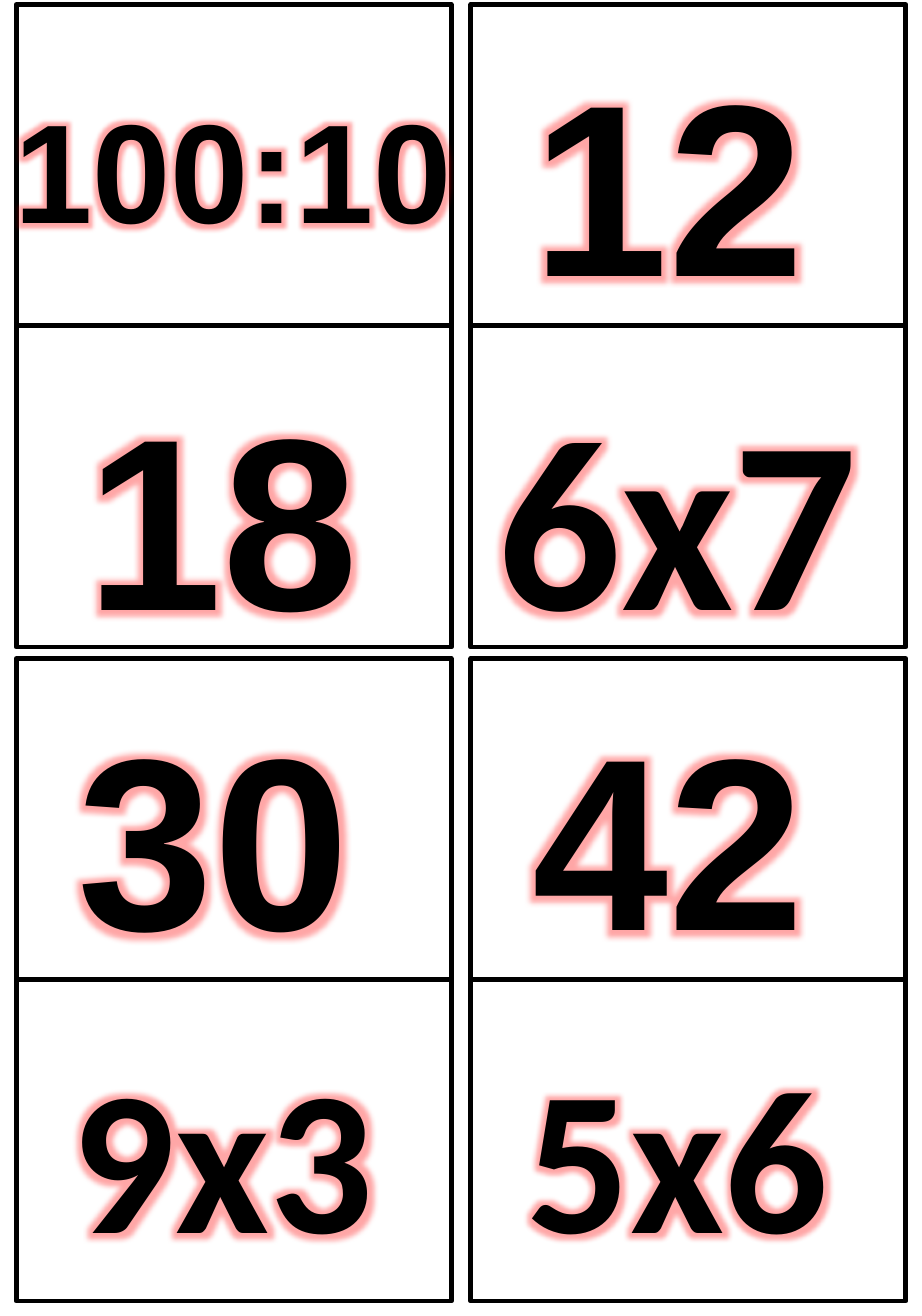
from lxml.etree import SubElement
from pptx import Presentation
from pptx.dml.color import RGBColor
from pptx.enum.shapes import MSO_CONNECTOR, MSO_SHAPE
from pptx.enum.text import MSO_AUTO_SIZE, PP_ALIGN
from pptx.oxml import parse_xml
from pptx.oxml.ns import nsdecls, qn
from pptx.util import Pt

PIXEL = 9144
BLACK = RGBColor(0x00, 0x00, 0x00)
WHITE = RGBColor(0xFF, 0xFF, 0xFF)
GLOW = RGBColor(0xFF, 0x00, 0x00)

CARD_WIDTH, CARD_HEIGHT = 378, 558
CARD_LEFT, CARD_TOP = 14, 4
COLUMN_STEP, ROW_STEP = 395, 568
TEXT_WIDTH = 427
TEXT_HEIGHTS = {153: 277, 128: 233, 88: 159}

CARDS = [
    [
        [("100:10", 88, -25, 62), ("18", 153, -34, 308)],
        [("12", 153, -42, 18), ("6x7", 153, -34, 308)],
    ],
    [
        [("30", 153, -42, 18), ("9x3", 128, -34, 316)],
        [("42", 153, -42, 18), ("5x6", 128, -34, 316)],
    ],
]


def px(*lengths):
    return [length * PIXEL for length in lengths]


def add_glow(run):
    properties = run.font._element
    effects = parse_xml(
        f'<a:effectLst {nsdecls("a")}><a:glow rad="{Pt(8)}"><a:srgbClr val="{GLOW}">'
        '<a:alpha val="35000"/></a:srgbClr></a:glow></a:effectLst>'
    )
    properties.find(qn("a:solidFill")).addnext(effects)


def add_text(slide, text, left, top, width, height, *, size, font="Calibri",
             complex_font="Arial", color=BLACK, bold=True):
    box = slide.shapes.add_textbox(*px(left, top, width, height))
    frame = box.text_frame
    frame.word_wrap = True
    frame.auto_size = MSO_AUTO_SIZE.SHAPE_TO_FIT_TEXT
    frame.margin_left, frame.margin_right = px(11, 11)
    frame.margin_top, frame.margin_bottom = px(6, 6)
    paragraph = frame.paragraphs[0]
    paragraph.alignment = PP_ALIGN.CENTER
    paragraph._p.get_or_add_pPr().set("rtl", "1")
    run = paragraph.add_run()
    run.text = text
    run.font.name = font
    run.font.size = Pt(size)
    run.font.bold = bold
    run.font.color.rgb = color
    add_glow(run)
    SubElement(run.font._element, qn("a:cs")).set("typeface", complex_font)


def add_card(slide, left, top, width, height, labels):
    card = slide.shapes.add_shape(MSO_SHAPE.RECTANGLE, *px(left, top, width, height))
    card.shadow.inherit = False
    card.fill.solid()
    card.fill.fore_color.rgb = WHITE
    middle = top + height // 2
    divider = slide.shapes.add_connector(
        MSO_CONNECTOR.STRAIGHT, *px(left, middle, left + width, middle)
    )
    divider.begin_connect(card, 1)
    divider.end_connect(card, 3)
    SubElement(divider._element.spPr, qn("a:effectLst"))
    for outline in (card.line, divider.line):
        outline.color.rgb = BLACK
        outline.width = Pt(3)
    for text, size, offset_x, offset_y in labels:
        add_text(slide, text, left + offset_x, top + offset_y,
                 TEXT_WIDTH, TEXT_HEIGHTS[size], size=size)


def main():
    presentation = Presentation()
    presentation.slide_width, presentation.slide_height = px(801, 1143)
    slide = presentation.slides.add_slide(presentation.slide_layouts[6])
    for row, cards in enumerate(CARDS):
        for column, labels in enumerate(cards):
            add_card(slide, CARD_LEFT + column * COLUMN_STEP, CARD_TOP + row * ROW_STEP,
                     CARD_WIDTH, CARD_HEIGHT, labels)
    presentation.save("out.pptx")


if __name__ == "__main__":
    main()
